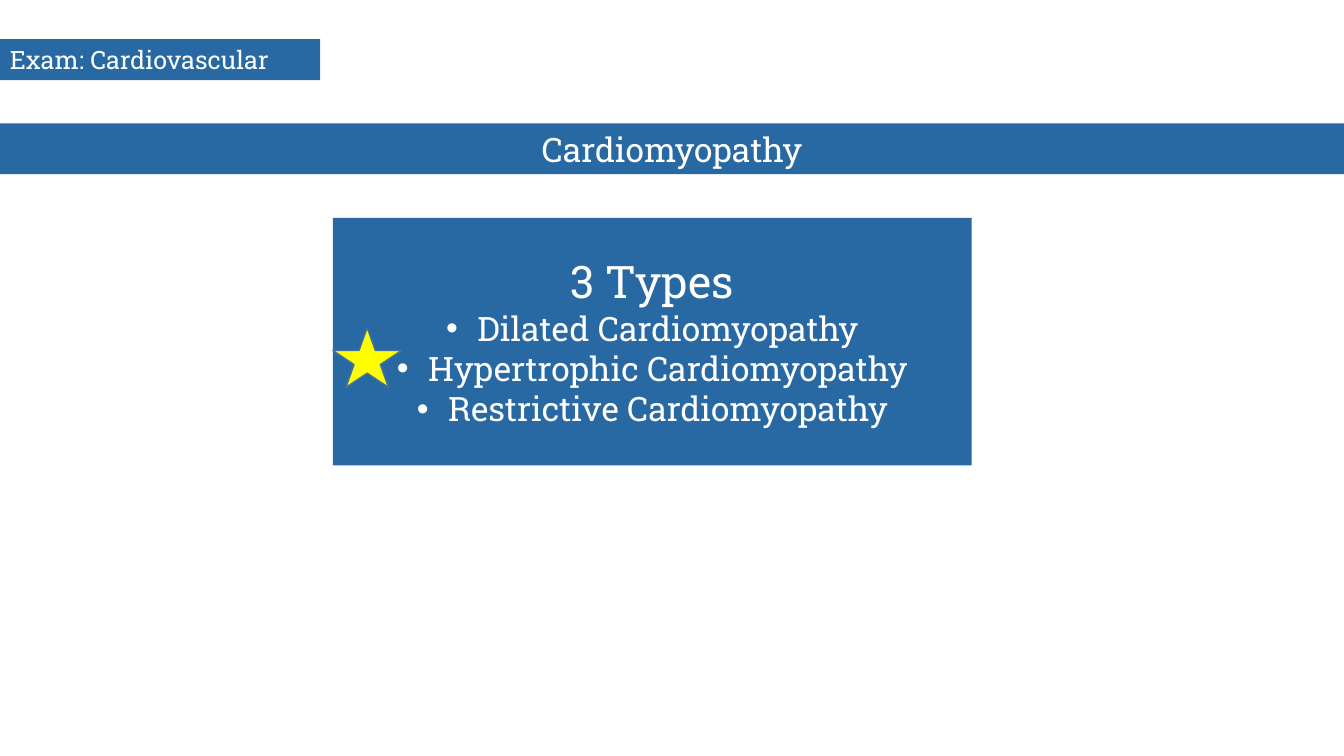
from pptx import Presentation
from pptx.dml.color import RGBColor
from pptx.enum.shapes import MSO_SHAPE
from pptx.enum.text import MSO_ANCHOR, PP_ALIGN
from pptx.util import Cm, Pt
from lxml.etree import SubElement
from pptx.oxml.ns import qn

WIDE = 33.87
BLUE, WHITE, GOLD, EDGE = "2969A3", "FFFFFF", "FFFF00", "43739E"


def tint(code):
    return RGBColor.from_string(code)


class Page:
    """Holds the text style and the current slide."""
    face = "Roboto Slab"

    def __init__(self, deck):
        self.slide = deck.slides.add_slide(deck.slide_layouts[6])

    def shape(self, kind, place, fill, edge=None):
        item = self.slide.shapes.add_shape(kind, *map(Cm, place))
        item.shadow.inherit = False
        item.fill.solid()
        item.fill.fore_color.rgb = tint(fill)
        if edge:
            item.line.color.rgb = tint(edge)
            item.line.width = Pt(1)
        else:
            item.line.fill.background()
        return item

    def panel(self, place, lines, align=PP_ALIGN.CENTER, top=0.13):
        """Blue box; lines are (text, size, bullet) tuples."""
        frame = self.shape(MSO_SHAPE.RECTANGLE, place, BLUE).text_frame
        form = {"word_wrap": True, "vertical_anchor": MSO_ANCHOR.TOP,
                "margin_top": Cm(top), "margin_bottom": Cm(0.13)}
        for key, value in form.items():
            setattr(frame, key, value)
        for i, (text, size, mark) in enumerate(lines):
            para = frame.add_paragraph() if i else frame.paragraphs[0]
            para.alignment = align
            if mark:
                self.bullet(para)
            run = para.add_run()
            run.text = text
            for key, value in {"name": self.face, "size": Pt(size)}.items():
                setattr(run.font, key, value)
            run.font.color.rgb = tint(WHITE)

    def bullet(self, para):
        props = para._p.get_or_add_pPr()
        props.set("marL", str(Cm(0.79)))
        props.set("indent", str(-Cm(0.79)))
        SubElement(props, qn("a:buFont"), typeface="Arial")
        SubElement(props, qn("a:buChar"), char="•")


def main():
    deck = Presentation()
    deck.slide_width, deck.slide_height = Cm(WIDE), Cm(19.05)
    page = Page(deck)

    # Title band and course label
    page.panel((0, 3.11, WIDE, 1.28), [("Cardiomyopathy", 24, False)])
    page.panel((0, 0.99, 8.07, 1.03), [("Exam: Cardiovascular", 18, False)],
               PP_ALIGN.LEFT)

    # List of types
    kinds = ("Dilated", "Hypertrophic", "Restrictive")
    page.panel((8.39, 5.49, 16.1, 6.24),
               [("3 Types", 32, False)]
               + [(f"{kind} Cardiomyopathy", 24, True) for kind in kinds],
               top=0.91)

    # Star beside the key type
    page.shape(MSO_SHAPE.STAR_5_POINT, (8.39, 8.26, 1.73, 1.5), GOLD, EDGE)

    deck.save("out.pptx")


if __name__ == "__main__":
    main()
